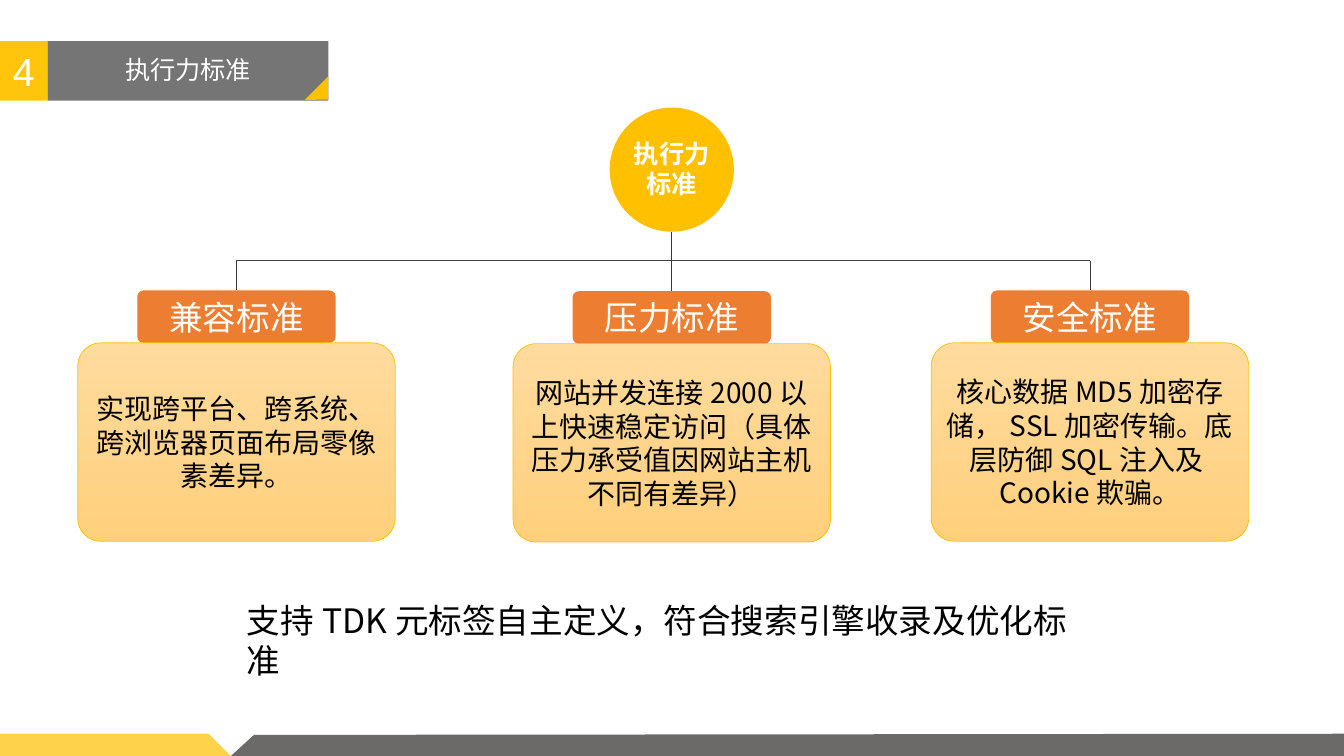
from lxml import etree
from pptx import Presentation
from pptx.dml.color import RGBColor
from pptx.enum.shapes import MSO_CONNECTOR, MSO_SHAPE
from pptx.enum.text import MSO_ANCHOR, PP_ALIGN
from pptx.oxml.ns import qn
from pptx.util import Cm, Pt

RECT, OVAL = MSO_SHAPE.RECTANGLE, MSO_SHAPE.OVAL
ROUND, WEDGE = MSO_SHAPE.ROUNDED_RECTANGLE, MSO_SHAPE.ISOSCELES_TRIANGLE
STRAIGHT = MSO_CONNECTOR.STRAIGHT
LEFT, CENTER = PP_ALIGN.LEFT, PP_ALIGN.CENTER
TOP, MIDDLE = MSO_ANCHOR.TOP, MSO_ANCHOR.MIDDLE

SANS, ARIAL = "Noto Sans CJK SC", "Arial"
WHITE, BLACK, GOLD, ORANGE = "FFFFFF", "000000", "FFC000", "ED7D31"
SAND = ("FFDB9E", "FFD07C")
DARK, BUS = "3B3838", "404040"

NUMBER, TITLE, ROOT = "4", "执行力标准", "执行力标准"
# center x, top of the tag, tag, text
BRANCHES = [
    (5.96, 7.32, "兼容标准", "实现跨平台、跨系统、跨浏览器页面布局零像素差异。"),
    (16.93, 7.34, "压力标准",
     "网站并发连接2000以上快速稳定访问（具体压力承受值因网站主机不同有差异）"),
    (27.47, 7.32, "安全标准",
     "核心数据MD5加密存储，SSL加密传输。底层防御SQL注入及Cookie欺骗。"),
]
CLOSING = "支持TDK元标签自主定义，符合搜索引擎收录及优化标准"

WIDE, HIGH = 33.87, 19.05
# color, opacity in percent, corners
FOOTER = [
    (GOLD, 70, [(0, 18.49), (5.26, 18.49), (5.82, HIGH), (0, HIGH)]),
    (DARK, 75, [(5.82, HIGH), (6.4, 18.52), (WIDE, 18.49), (WIDE, HIGH)]),
]
TAG_W, TAG_H = 5, 1.32
CARD_W, CARD_H = 8, 5
BALL, BALL_TOP, BUS_Y = 3.13, 2.71, 6.57
INSET = (0.18, 0.1)

deck = Presentation()
deck.slide_width, deck.slide_height = Cm(WIDE), Cm(HIGH)
slide = deck.slides.add_slide(deck.slide_layouts[6])
shapes = slide.shapes


def rgb(code):
    return RGBColor.from_string(code)


def write(shape, text, size, color, font=SANS, bold=False, align=CENTER,
          anchor=MIDDLE, inset=(0.25, 0.13), space=None):
    frame = shape.text_frame
    frame.word_wrap = True
    frame.vertical_anchor = anchor
    frame.margin_left = frame.margin_right = Cm(inset[0])
    frame.margin_top = frame.margin_bottom = Cm(inset[1])
    para = frame.paragraphs[0]
    para.alignment = align
    if space:
        para.line_spacing = space
    run = para.add_run()
    run.text = text
    run.font.size, run.font.bold = Pt(size), bold
    run.font.color.rgb = rgb(color)
    run.font.name = font
    east = etree.SubElement(run.font._element, qn("a:ea"))
    east.set("typeface", font)


def paint(shape, fill, line=None):
    """Fill with one color, or from top to bottom with a pair of colors."""
    shape.shadow.inherit = False
    if isinstance(fill, tuple):
        shape.fill.gradient()
        shape.fill.gradient_angle = 270
        for stop, code in zip(shape.fill.gradient_stops, fill):
            stop.color.rgb = rgb(code)
    else:
        shape.fill.solid()
        shape.fill.fore_color.rgb = rgb(fill)
    if line:
        shape.line.color.rgb = rgb(line)
        shape.line.width = Pt(0.5)
    else:
        shape.line.fill.background()


def block(kind, x, y, w, h, fill, line=None):
    shape = shapes.add_shape(kind, Cm(x), Cm(y), Cm(w), Cm(h))
    if kind == ROUND:
        shape.adjustments[0] = 0.117
    paint(shape, fill, line)
    return shape


def label(x, y, w, h):
    return shapes.add_textbox(Cm(x), Cm(y), Cm(w), Cm(h))


def rule(x1, y1, x2, y2, color):
    line = shapes.add_connector(STRAIGHT, Cm(x1), Cm(y1), Cm(x2), Cm(y2))
    line.line.color.rgb = rgb(color)
    line.line.width = Pt(0.5)
    etree.SubElement(line._element.spPr, qn("a:effectLst"))


def band(color, solid, points):
    """Draw a see-through outline; solid is its opacity in percent."""
    spots = [(Cm(x), Cm(y)) for x, y in points]
    pen = shapes.build_freeform(*spots[0])
    pen.add_line_segments(spots[1:], close=True)
    shape = pen.convert_to_shape()
    paint(shape, color)
    tone = shape._element.spPr.find(qn("a:solidFill"))[0]
    etree.SubElement(tone, qn("a:alpha")).set("val", str(solid * 1000))


# Header
write(block(RECT, 0, 1.04, 1.2, 1.5, "FFC50D"), NUMBER, 28, WHITE, ARIAL)
write(block(RECT, 1.2, 1.04, 7.08, 1.5, "757575"), TITLE, 18, WHITE, space=0.9)
block(WEDGE, 7.7, 2.16, 0.84, 0.41, GOLD).rotation = 135

for part in FOOTER:
    band(*part)

# Tree
mid = BRANCHES[1][0]
rule(BRANCHES[0][0], BUS_Y, BRANCHES[-1][0], BUS_Y, BUS)
block(OVAL, mid - BALL / 2, BALL_TOP, BALL, BALL, GOLD)
write(label(mid - 1.2, 3.38, 2.4, 1.78), ROOT, 18, WHITE, bold=True,
      anchor=TOP, inset=INSET)
for x, top, tag, text in BRANCHES:
    start = BALL_TOP + BALL if x == mid else BUS_Y
    rule(x, start, x, top, DARK)
    write(block(ROUND, x - TAG_W / 2, top, TAG_W, TAG_H, ORANGE),
          tag, 24, WHITE, inset=INSET)
    card = block(ROUND, x - CARD_W / 2, top + TAG_H, CARD_W, CARD_H, SAND, GOLD)
    write(card, text, 20, BLACK, inset=INSET)

write(label(5.97, 14.99, 21.97, 1.27), CLOSING, 24, BLACK,
      align=LEFT, anchor=TOP)

deck.save("out.pptx")
